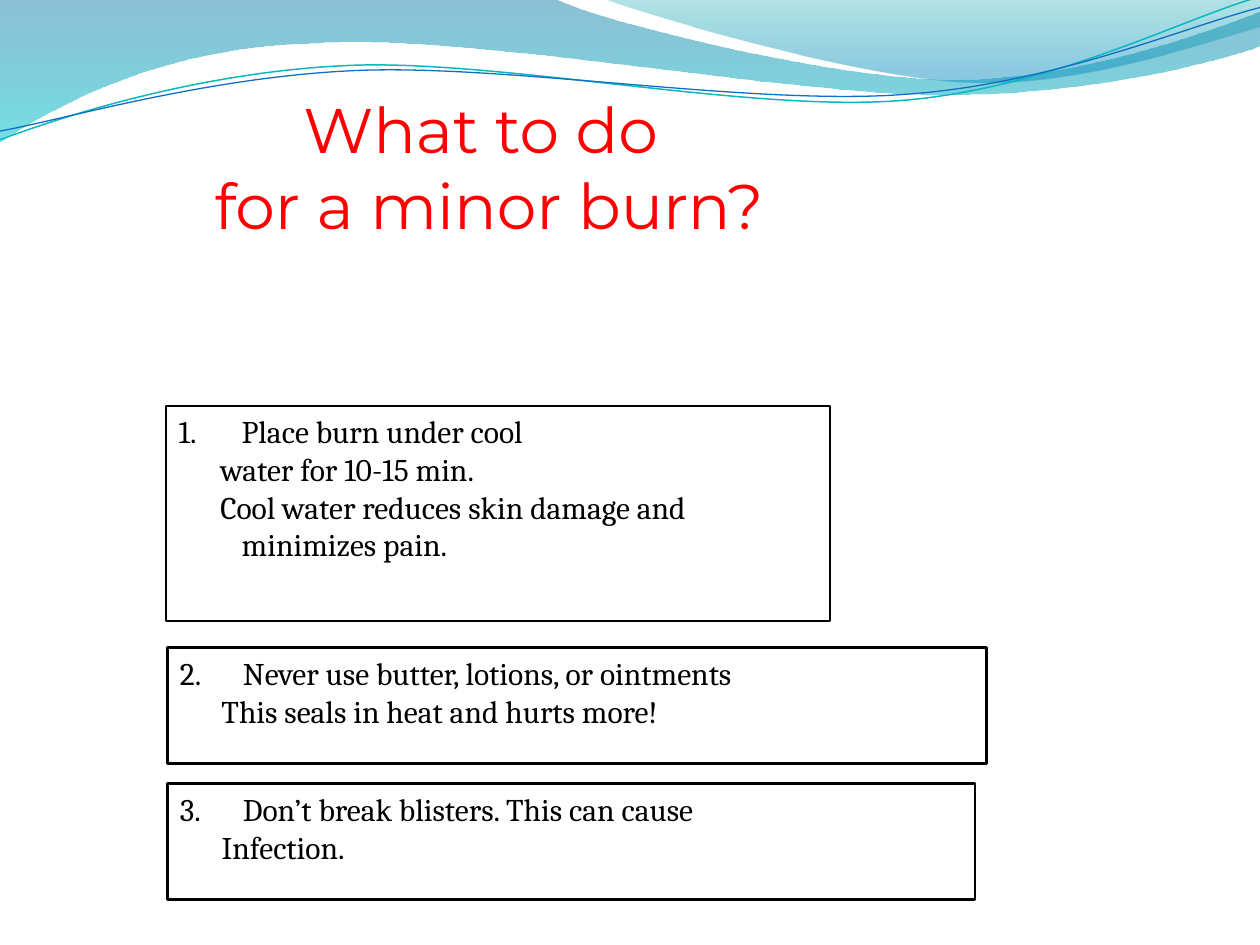
from dataclasses import dataclass

import pptx
import pptx.dml.color
import pptx.enum.shapes
import pptx.enum.text
import pptx.oxml.ns
import pptx.util
from lxml import etree
from pptx.util import Inches


@dataclass(frozen=True)
class Theme:
    title_font: str = "Montserrat"
    body_font: str = "Cambria"
    title_size: int = 36
    body_size: int = 18
    title: str = "FF0000"
    ink: str = "000000"
    paper: str = "FFFFFF"
    # Gradient stops: position, colour, opacity in percent
    wave_low: tuple = ((0, "0074A1", 45), (1, "00C6CF", 55))
    wave_high: tuple = ((0, "00A1A9", 30), (0.8, "008BBF", 45))
    teal_line: str = "0AB8BF"
    blue_line: str = "0F6FC6"


THEME = Theme()
HANGING = 0.5
CONTINUATION_INDENT = -0.17

# Each segment holds one point if straight, three if a cubic curve.
LOW_WAVE = [
    [(0, 0)],
    [(4.4, -0.01)],
    [(4.76, 0.17), (6.64, 0.63), (7.58, 0.63)],
    [(8.53, 0.63), (9.58, 0.26), (10, 0.09)],
    [(10.01, 0.36)],
    [(9.83, 0.44), (8.7, 0.76), (7.46, 0.75)],
    [(6.22, 0.75), (3.82, 0.28), (2.57, 0.34)],
    [(1.29, 0.36), (0.46, 0.83), (-0.01, 1.13)],
    [(0, 0)],
]
HIGH_WAVE = [
    [(4.79, -0.01)],
    [(5.09, 0.11), (6.82, 0.62), (7.69, 0.65)],
    [(8.56, 0.69), (9.61, 0.32), (10, 0.21)],
    [(10, 0)],
    [(4.79, -0.01)],
]
TEAL_CURVE = [
    [(0, 1.11)],
    [(0.48, 0.93), (1.58, 0.57), (2.77, 0.52)],
    [(3.95, 0.47), (5.93, 0.89), (7.13, 0.8)],
    [(8.33, 0.71), (9.38, 0.15), (9.98, -0.02)],
]
BLUE_CURVE = [
    [(0, 1.04)],
    [(0.47, 0.96), (1.64, 0.61), (2.83, 0.56)],
    [(4.03, 0.51), (5.97, 0.84), (7.17, 0.75)],
    [(8.36, 0.67), (9.41, 0.21), (10, 0.06)],
]

# Box (left, top, width, height), border width, lines
STEPS = [
    ((1.32, 3.22, 5.27, 1.71), 1,
     ["Place burn under cool", "water for 10-15 min.",
      "Cool water reduces skin damage and minimizes pain."]),
    ((1.33, 5.14, 6.5, 0.92), 1.5,
     ["Never use butter, lotions, or ointments",
      "This seals in heat and hurts more!"]),
    ((1.33, 6.22, 6.41, 0.92), 1.5,
     ["Don’t break blisters. This can cause", "Infection."]),
]


def rgb(value):
    return pptx.dml.color.RGBColor.from_string(value)


def add_outline(slide, box, segments, close):
    """Draw an outline whose points are measured from the box corner."""
    left, top = box[:2]
    points = [(Inches(left + x), Inches(top + y))
              for segment in segments for x, y in segment]
    builder = slide.shapes.build_freeform(*points[0])
    builder.add_line_segments(points[1:], close=close)
    shape = builder.convert_to_shape()
    shape.shadow.inherit = False
    bend_curves(shape, segments)
    return shape


def bend_curves(shape, segments):
    """Join the straight lines of each three-point segment into one cubic."""
    lines = iter(list(shape.element.iter(pptx.oxml.ns.qn("a:lnTo"))))
    for segment in segments[1:]:
        first, *others = [next(lines) for _ in segment]
        if not others:
            continue
        curve = etree.Element(pptx.oxml.ns.qn("a:cubicBezTo"))
        first.addprevious(curve)
        for line in (first, *others):
            curve.append(line[0])
            line.getparent().remove(line)


def add_wave(slide, box, segments, stops):
    shape = add_outline(slide, box, segments, close=True)
    shape.line.fill.background()
    shape.fill.gradient()
    shape.fill.gradient_angle = 270
    for stop, (position, color, _) in zip(shape.fill.gradient_stops, stops):
        stop.position = position
        stop.color.rgb = rgb(color)
    colors = shape.element.iter(pptx.oxml.ns.qn("a:srgbClr"))
    for element, (_, _, opacity) in zip(list(colors), stops):
        alpha = etree.SubElement(element, pptx.oxml.ns.qn("a:alpha"))
        alpha.set("val", str(opacity * 1000))


def add_curve(slide, box, segments, color, width):
    shape = add_outline(slide, box, segments, close=False)
    shape.fill.background()
    shape.line.color.rgb = rgb(color)
    shape.line.width = pptx.util.Pt(width)


def add_header(slide, box):
    add_wave(slide, box, LOW_WAVE, THEME.wave_low)
    add_wave(slide, box, HIGH_WAVE, THEME.wave_high)
    add_curve(slide, box, TEAL_CURVE, THEME.teal_line, 0.85)
    add_curve(slide, box, BLUE_CURVE, THEME.blue_line, 0.75)


def write_lines(frame, lines, *, font, size, color, alignment, wrap):
    frame.word_wrap = wrap
    frame.vertical_anchor = pptx.enum.text.MSO_ANCHOR.TOP
    for index, line in enumerate(lines):
        paragraph = frame.paragraphs[0] if index == 0 else frame.add_paragraph()
        paragraph.alignment = alignment
        run = paragraph.add_run()
        run.text = line
        run.font.name = font
        run.font.size = pptx.util.Pt(size)
        run.font.color.rgb = rgb(color)


def indent(paragraph, first_line, number=None):
    """Set a hanging indent, with an automatic number if one is given."""
    properties = paragraph._p.get_or_add_pPr()
    properties.set("marL", str(Inches(HANGING)))
    properties.set("indent", str(Inches(first_line)))
    if number:
        bullet = etree.SubElement(properties, pptx.oxml.ns.qn("a:buAutoNum"))
        bullet.set("type", "arabicPeriod")
        bullet.set("startAt", str(number))


def add_title(slide, box):
    shape = slide.shapes.add_textbox(*map(Inches, box))
    write_lines(shape.text_frame, ["What to do ", "for a minor burn?"],
                font=THEME.title_font, size=THEME.title_size, color=THEME.title,
                alignment=pptx.enum.text.PP_ALIGN.CENTER, wrap=False)


def add_step(slide, box, number, lines, border):
    shape = slide.shapes.add_shape(
        pptx.enum.shapes.MSO_SHAPE.RECTANGLE, *map(Inches, box))
    shape.shadow.inherit = False
    shape.fill.solid()
    shape.fill.fore_color.rgb = rgb(THEME.paper)
    shape.line.color.rgb = rgb(THEME.ink)
    shape.line.width = pptx.util.Pt(border)
    write_lines(shape.text_frame, lines, font=THEME.body_font,
                size=THEME.body_size, color=THEME.ink,
                alignment=pptx.enum.text.PP_ALIGN.LEFT, wrap=True)
    first, *others = shape.text_frame.paragraphs
    indent(first, -HANGING, number)
    for paragraph in others:
        indent(paragraph, CONTINUATION_INDENT)


def main():
    presentation = pptx.Presentation()
    presentation.slide_width = Inches(10)
    presentation.slide_height = Inches(7.5)
    slide = presentation.slides.add_slide(presentation.slide_layouts[6])
    add_header(slide, (0, 0, 10, 1.13))
    add_title(slide, (1.17, 0.67, 5.42, 2.17))
    for number, (box, border, lines) in enumerate(STEPS, start=1):
        add_step(slide, box, number, lines, border)
    presentation.save("out.pptx")


if __name__ == "__main__":
    main()
